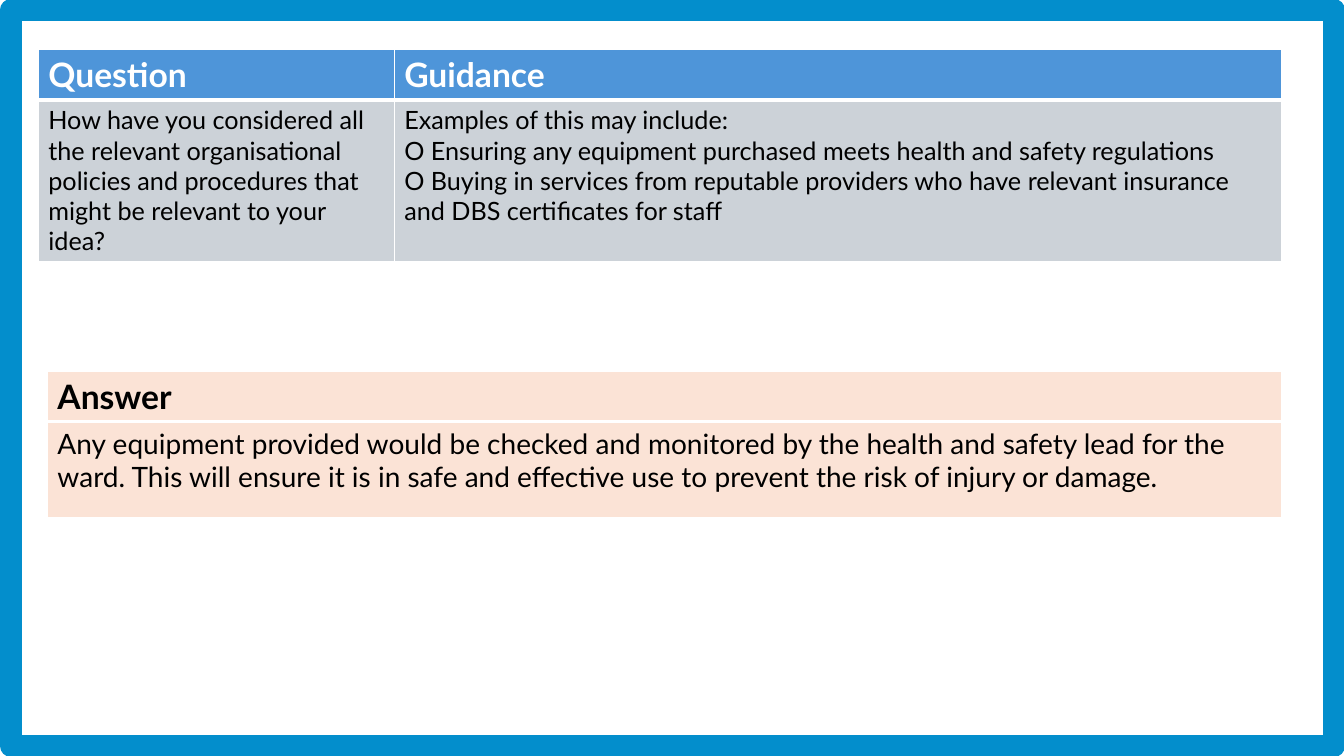
from pptx import Presentation
from pptx.dml.color import RGBColor
from pptx.enum.shapes import MSO_SHAPE
from pptx.oxml import parse_xml
from pptx.oxml.ns import nsdecls
from pptx.util import Pt

EMU_PER_PX = 9144
COLOURS = {
    "frame": "038ECC",
    "header": "4E95D9",
    "guidance": "CCD2D8",
    "answer": "FBE3D6",
    "white": "FFFFFF",
    "black": "000000",
}


def px(length):
    return length * EMU_PER_PX


def colour(name):
    return RGBColor.from_string(COLOURS[name])


class SlideBuilder:
    font = "Lato"
    header_size = 24
    row_heights = (41, 95)

    def __init__(self, page):
        self.page = page

    def frame(self, left, top, width, height, line_width):
        box = self.page.shapes.add_shape(
            MSO_SHAPE.RECTANGLE, px(left), px(top), px(width), px(height))
        box.shadow.inherit = False
        box.fill.background()
        box.line.color.rgb = colour("frame")
        box.line.width = Pt(line_width)

    def borders(self, cell, top, bottom):
        properties = cell._tc.get_or_add_tcPr()
        widths = {"lnL": 1, "lnR": 1, "lnT": top, "lnB": bottom}
        for index, (side, width) in enumerate(widths.items()):
            properties.insert(index, parse_xml(
                f'<a:{side} {nsdecls("a")} w="{Pt(width)}"><a:solidFill>'
                f'<a:srgbClr val="{COLOURS["white"]}"/></a:solidFill></a:{side}>'))

    def cell(self, cell, text, fill, ink, size, bold):
        cell.text_frame.text = text
        cell.fill.solid()
        cell.fill.fore_color.rgb = colour(fill)
        for para in cell.text_frame.paragraphs:
            for span in para.runs:
                span.font.name = self.font
                span.font.size = Pt(size)
                span.font.bold = bold
                span.font.color.rgb = colour(ink)

    def table(self, left, top, widths, headers, bodies,
              header_fill, header_ink, body_fill, body_size):
        table = self.page.shapes.add_table(
            2, len(widths), px(left), px(top),
            px(sum(widths)), px(sum(self.row_heights))).table
        for row, height in zip(table.rows, self.row_heights):
            row.height = px(height)
        for index, width in enumerate(widths):
            table.columns[index].width = px(width)
            header, body = table.cell(0, index), table.cell(1, index)
            self.cell(header, headers[index], header_fill, header_ink,
                      self.header_size, True)
            self.cell(body, bodies[index], body_fill, "black", body_size, False)
            self.borders(header, top=1, bottom=3)
            self.borders(body, top=3, bottom=1)


def main():
    deck = Presentation()
    deck.slide_width, deck.slide_height = px(1333), px(750)
    builder = SlideBuilder(deck.slides.add_slide(deck.slide_layouts[6]))

    builder.frame(11, 10, 1312, 730, line_width=16)
    builder.table(
        38, 49, (353, 880),
        ("Question", "Guidance"),
        ("How have you considered all the relevant organisational policies "
         "and procedures that might be relevant to your idea?",
         "Examples of this may include:\n"
         "O Ensuring any equipment purchased meets health and safety regulations\n"
         "O Buying in services from reputable providers who have relevant "
         "insurance and DBS certificates for staff"),
        header_fill="header", header_ink="white",
        body_fill="guidance", body_size=18)
    builder.table(
        47, 368, (1224,),
        ("Answer",),
        ("Any equipment provided would be checked and monitored by the health "
         "and safety lead for the ward. This will ensure it is in safe and "
         "effective use to prevent the risk of injury or damage.",),
        header_fill="answer", header_ink="black",
        body_fill="answer", body_size=20)

    deck.save("out.pptx")


if __name__ == "__main__":
    main()
